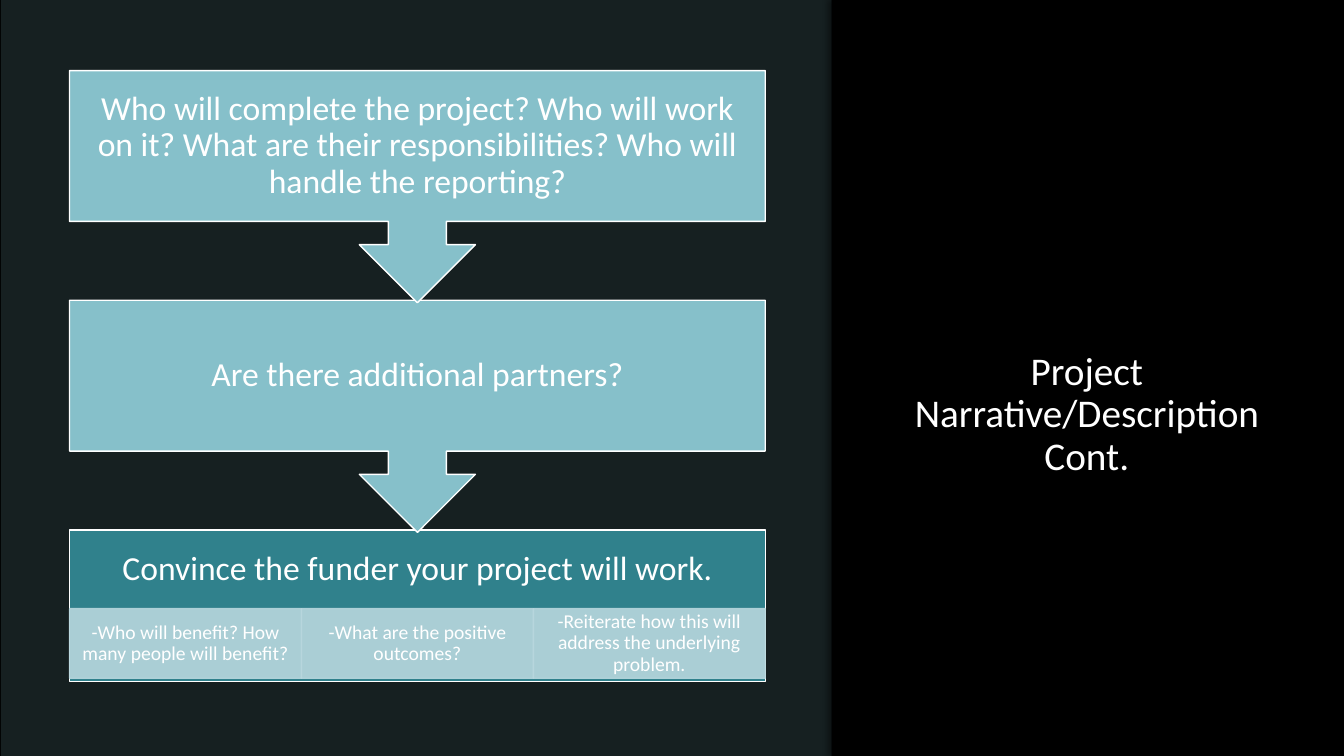
import pptx
import pptx.util
import pptx.dml.color
import pptx.enum.shapes
import pptx.enum.text
import pptx.oxml.ns
import lxml.etree

WIDTH, HEIGHT = 13.33, 7.5
SPLIT = 8.25
FONT = "Calibri"
COLORS = {
    "black": "000000",
    "white": "FFFFFF",
    "panel": "94D7E4",
    "question": "86C0CA",
    "goal": "30818C",
    "detail": "B8D7DE",
}
QUESTIONS = [
    "Who will complete the project? Who will work on it? What are their "
    "responsibilities? Who will handle the reporting?",
    "Are there additional partners?",
]
GOAL = "Convince the funder your project will work."
DETAILS = [
    "-Who will benefit? How many people will benefit?",
    "-What are the positive outcomes?",
    "-Reiterate how this will address the underlying problem.",
]
SHAPE = pptx.enum.shapes.MSO_SHAPE


def rgb(name):
    return pptx.dml.color.RGBColor.from_string(COLORS[name])


def add_child(parent, tag, **attrs):
    node = lxml.etree.SubElement(parent, pptx.oxml.ns.qn(tag))
    for key, value in attrs.items():
        node.set(key, str(value))
    return node


def paint(fill, color, opacity=100):
    fill.solid()
    fill.fore_color.rgb = rgb(color)
    if opacity < 100:
        clr = fill._xPr.find(".//" + pptx.oxml.ns.qn("a:srgbClr"))
        add_child(clr, "a:alpha", val=opacity * 1000)


def add_box(s, kind, box, fill, line=None, opacity=100):
    sp = s.shapes.add_shape(kind, *map(pptx.util.Inches, box))
    sp.shadow.inherit = False
    paint(sp.fill, fill, opacity)
    if line:
        sp.line.width = pptx.util.Pt(1)
        paint(sp.line.fill, line, opacity)
    else:
        sp.line.fill.background()
    return sp


def write(sp, text, size, insets):
    tf = sp.text_frame
    tf.word_wrap = True
    tf.vertical_anchor = pptx.enum.text.MSO_ANCHOR.MIDDLE
    tf.margin_left, tf.margin_top, tf.margin_right, tf.margin_bottom = map(
        pptx.util.Inches, insets)
    p = tf.paragraphs[0]
    p.alignment = pptx.enum.text.PP_ALIGN.CENTER
    p.line_spacing = 0.9
    r = p.add_run()
    r.text = text
    r.font.name = FONT
    r.font.size = pptx.util.Pt(size)
    r.font.color.rgb = rgb("white")


def draw_title_panel(s, x, y, w, h):
    sp = add_box(s, SHAPE.RECTANGLE, (x, y, w, h), "black")
    effects = sp._element.spPr.find(pptx.oxml.ns.qn("a:effectLst"))
    shadow = add_child(effects, "a:outerShdw", blurRad=pptx.util.Pt(4),
                       dist=pptx.util.Pt(3), dir=180 * 60000)
    clr = add_child(shadow, "a:srgbClr", val=COLORS["black"])
    add_child(clr, "a:alpha", val=40000)
    title = s.shapes.add_textbox(*map(pptx.util.Inches, (
        x + 0.13 * w, y + 0.197 * h, 0.736 * w, 0.704 * h)))
    write(title, "Project Narrative/Description Cont.", 28, (0.1, 0.05, 0.1, 0.05))


def draw_goal(s, x, y, w, h):
    head, row = 0.52 * h, 0.46 * h
    goal = add_box(s, SHAPE.RECTANGLE, (x, y, w, h), "goal", "white")
    write(goal, GOAL, 24, (0.19, 0.19, 0.19, h - head + 0.19))
    col = w / len(DETAILS)
    for i, text in enumerate(DETAILS):
        detail = add_box(s, SHAPE.RECTANGLE, (x + i * col, y + head, col, row),
                         "detail", "detail", 90)
        write(detail, text, 14, (0.11, 0.02, 0.11, 0.02))


def draw_flow(s, x, y, w, h):
    step, callout, body = 0.376 * h, 0.38 * h, 0.248 * h
    draw_goal(s, x, y + len(QUESTIONS) * step, w, body)
    for i, text in reversed(list(enumerate(QUESTIONS))):
        sp = add_box(s, SHAPE.DOWN_ARROW_CALLOUT,
                     (x, y + i * step, w, callout), "question", "white")
        write(sp, text, 24, (0.19,) * 4)


def main():
    prs = pptx.Presentation()
    prs.slide_width = pptx.util.Inches(WIDTH)
    prs.slide_height = pptx.util.Inches(HEIGHT)
    s = prs.slides.add_slide(prs.slide_layouts[6])
    paint(s.background.fill, "black")
    add_box(s, SHAPE.RECTANGLE, (0.01, 0, SPLIT - 0.01, HEIGHT), "panel", opacity=15)
    draw_title_panel(s, SPLIT, 0, WIDTH - SPLIT, HEIGHT)
    draw_flow(s, 0.69, 0.7, 6.9, 6.06)
    prs.save("out.pptx")


if __name__ == "__main__":
    main()
